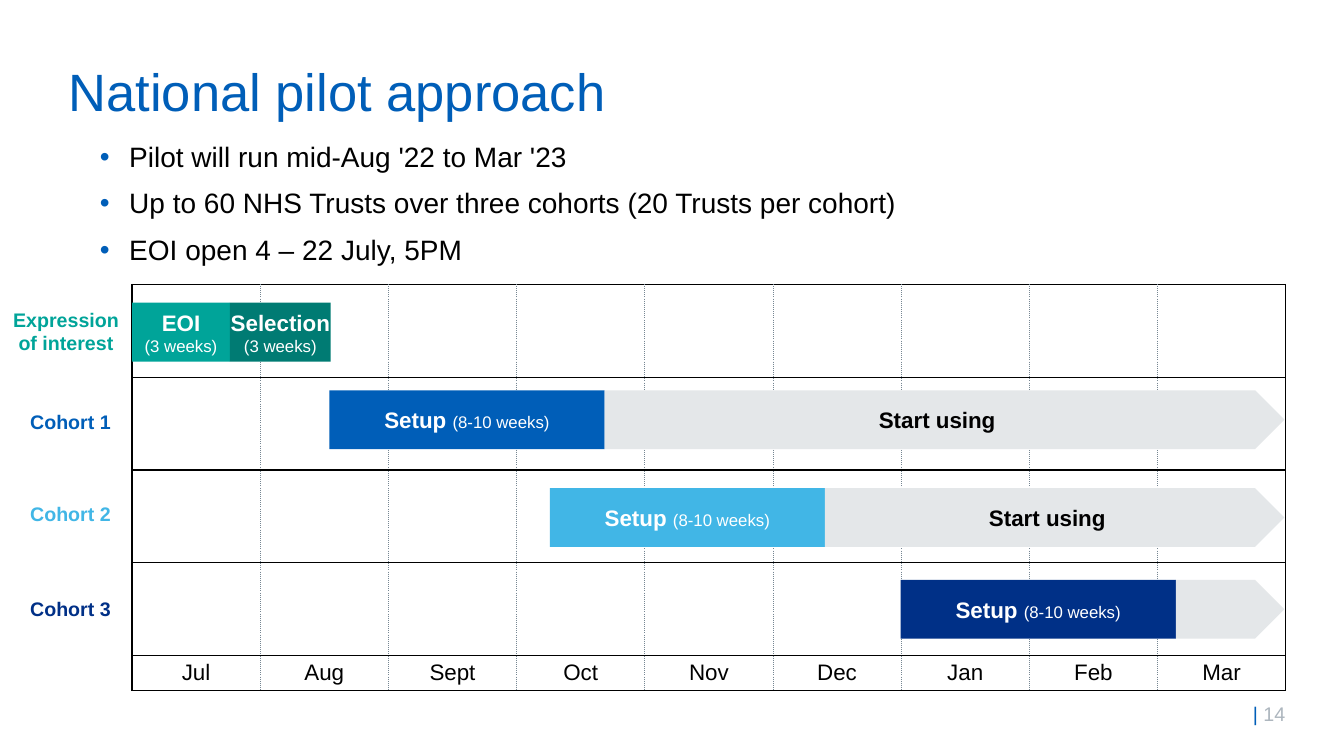
from lxml.etree import SubElement as Sub, Element as Elem
from pptx import Presentation
from pptx.dml.color import RGBColor
from pptx.enum.shapes import MSO_SHAPE as Kind
from pptx.enum.text import MSO_ANCHOR as Anchor, MSO_AUTO_SIZE as Fit, PP_ALIGN as Align
from pptx.oxml.ns import qn
from pptx.util import Pt

BLUE = RGBColor(0x00, 0x5E, 0xB8)
SKY = RGBColor(0x41, 0xB6, 0xE6)
NAVY = RGBColor(0x00, 0x30, 0x87)
TEAL = RGBColor(0x00, 0xA4, 0x99)
PINE = RGBColor(0x00, 0x7B, 0x73)
PALE = RGBColor(0xE4, 0xE7, 0xE9)
GREY = RGBColor(0xAD, 0xB6, 0xBE)
SLATE = RGBColor(0x76, 0x86, 0x92)
BLACK = RGBColor(0, 0, 0)
WHITE = RGBColor(255, 255, 255)

MONTHS = ["Jul", "Aug", "Sept", "Oct", "Nov", "Dec", "Jan", "Feb", "Mar"]
POINTS = [
    "Pilot will run mid-Aug '22 to Mar '23",
    "Up to 60 NHS Trusts over three cohorts (20 Trusts per cohort)",
    "EOI open 4 – 22 July, 5PM",
]
COHORTS = [
    ("Cohort 1", BLUE, 141, 75.6, 85.8, "Start using"),
    ("Cohort 2", SKY, 298.4, 145.5, 152, "Start using"),
    ("Cohort 3", NAVY, 549, 211, 219.6, ""),
]
ROW, FOOT = 66.3, 25


def put(para, text, size, color, bold=False):
    """Add one Arial run to a paragraph."""
    run = para.add_run()
    run.text = text
    font = run.font
    font.name, font.size, font.bold = "Arial", Pt(size), bold
    font.color.rgb = color


def place(shape, box):
    """Move a shape to a box given in points."""
    shape.left, shape.top, shape.width, shape.height = map(Pt, box)


def head(slide, box):
    """Fill the title placeholder."""
    title = slide.shapes.title
    place(title, box)
    frame = title.text_frame
    frame.auto_size = Fit.NONE
    frame.vertical_anchor = Anchor.MIDDLE
    para = frame.paragraphs[0]
    para.alignment, para.line_spacing = Align.LEFT, 0.9
    put(para, "National pilot approach", 37.5, BLUE)


def bullets(slide, box):
    """Fill the body placeholder with the bullet list."""
    body = slide.placeholders[1]
    place(body, box)
    frame = body.text_frame
    frame.auto_size = Fit.NONE
    for i, text in enumerate(POINTS):
        para = frame.add_paragraph() if i else frame.paragraphs[0]
        props = para._p.get_or_add_pPr()
        props.set("marL", str(Pt(21)))
        props.set("indent", str(-Pt(21)))
        tint = Sub(props, qn("a:buClr"))
        Sub(tint, qn("a:srgbClr"), val=str(BLUE))
        Sub(props, qn("a:buFont"), typeface="Arial")
        Sub(props, qn("a:buChar"), char="•")
        para.line_spacing = 0.9
        para.space_before = Pt(11.7 if i else 0)
        put(para, text, 20, BLACK)


def edge(tag, color, width, dash):
    """Make one cell border."""
    line = Elem(qn(tag), w=str(Pt(width)))
    Sub(Sub(line, qn("a:solidFill")), qn("a:srgbClr"), val=str(color))
    Sub(line, qn("a:prstDash"), val=dash)
    return line


def grid(slide, box):
    """Draw the month grid as a table."""
    rows, cols = 5, len(MONTHS)
    solid, dots = (BLACK, 1, "solid"), (SLATE, 0.5, "sysDot")
    table = slide.shapes.add_table(rows, cols, *map(Pt, box)).table
    table.first_row = table.horz_banding = False
    for col in table.columns:
        col.width = Pt(box[2] / cols)
    for r, row in enumerate(table.rows):
        row.height = Pt(ROW if r < rows - 1 else FOOT)
        for c, cell in enumerate(row.cells):
            cell.fill.background()
            cell.vertical_anchor = Anchor.MIDDLE
            cell.margin_top = cell.margin_bottom = Pt(3)
            sides = [
                edge("a:lnL", *(dots if c else solid)),
                edge("a:lnR", *(dots if c < cols - 1 else solid)),
                edge("a:lnT", *solid),
                edge("a:lnB", *solid),
            ]
            for i, side in enumerate(sides):
                cell._tc.get_or_add_tcPr().insert(i, side)
            if r == rows - 1:
                para = cell.text_frame.paragraphs[0]
                para.alignment = Align.CENTER
                put(para, MONTHS[c], 16, BLACK)


def bar(slide, box, kind, fill, lines):
    """Draw one bar whose lines are lists of runs."""
    shape = slide.shapes.add_shape(kind, *map(Pt, box))
    shape.shadow.inherit = False
    shape.fill.solid()
    shape.fill.fore_color.rgb = fill
    shape.line.fill.background()
    frame = shape.text_frame
    frame.margin_left = frame.margin_right = 0
    frame.vertical_anchor = Anchor.MIDDLE
    for i, runs in enumerate(lines):
        para = frame.add_paragraph() if i else frame.paragraphs[0]
        para.alignment = Align.CENTER
        for run in runs:
            put(para, *run)


def note(slide, box, runs, align=Align.CENTER):
    """Add a small text box with one paragraph."""
    frame = slide.shapes.add_textbox(*map(Pt, box)).text_frame
    frame.word_wrap = True
    para = frame.paragraphs[0]
    para.alignment = align
    for run in runs:
        put(para, *run)


def intake(slide, box):
    """Draw the expression of interest row."""
    left, top, _, _ = box
    note(slide, (0, top + 13, left, 41), [("Expression of interest", 14, TEAL, True)])
    for x, wide, text, fill in [(0, 70, "EOI", TEAL), (70, 72, "Selection", PINE)]:
        lines = [[(text, 16, WHITE, True)], [("(3 weeks)", 12, WHITE)]]
        bar(slide, (left + x, top + 13, wide, 42.2), Kind.RECTANGLE, fill, lines)


def cohort(slide, box, name, fill, start, drop, label, use):
    """Draw one cohort's label, setup bar and usage arrow."""
    left, top, width, _ = box
    setup, tall = 196.6, 42
    x, y = left + start, top + drop
    note(slide, (0, top + label, 100.8, 24.5), [(name, 14, fill, True)])
    text = [("Setup ", 16, WHITE, True), ("(8-10 weeks)", 12, WHITE)]
    bar(slide, (x, y, setup, tall), Kind.RECTANGLE, fill, [text])
    x += setup
    span = left + width - 1 - x
    lines = [[(use, 16, BLACK, True)]] if use else []
    bar(slide, (x, y, span, tall), Kind.PENTAGON, PALE, lines)


def main():
    """Build the slide and save it."""
    deck = Presentation()
    deck.slide_width, deck.slide_height = Pt(960), Pt(540)
    slide = deck.slides.add_slide(deck.slide_layouts[1])
    plan = (94.3, 203.2, 824.2, 4 * ROW + FOOT)
    head(slide, (41.8, 43.2, 877, 48.2))
    bullets(slide, (64.1, 98.6, 877, 99.4))
    grid(slide, plan)
    intake(slide, plan)
    for item in COHORTS:
        cohort(slide, plan, *item)
    page = [("| ", 14.1, BLUE), ("14", 14.1, GREY)]
    note(slide, (887.8, 497.5, 67.7, 24.5), page, Align.LEFT)
    deck.save("out.pptx")


if __name__ == "__main__":
    main()
